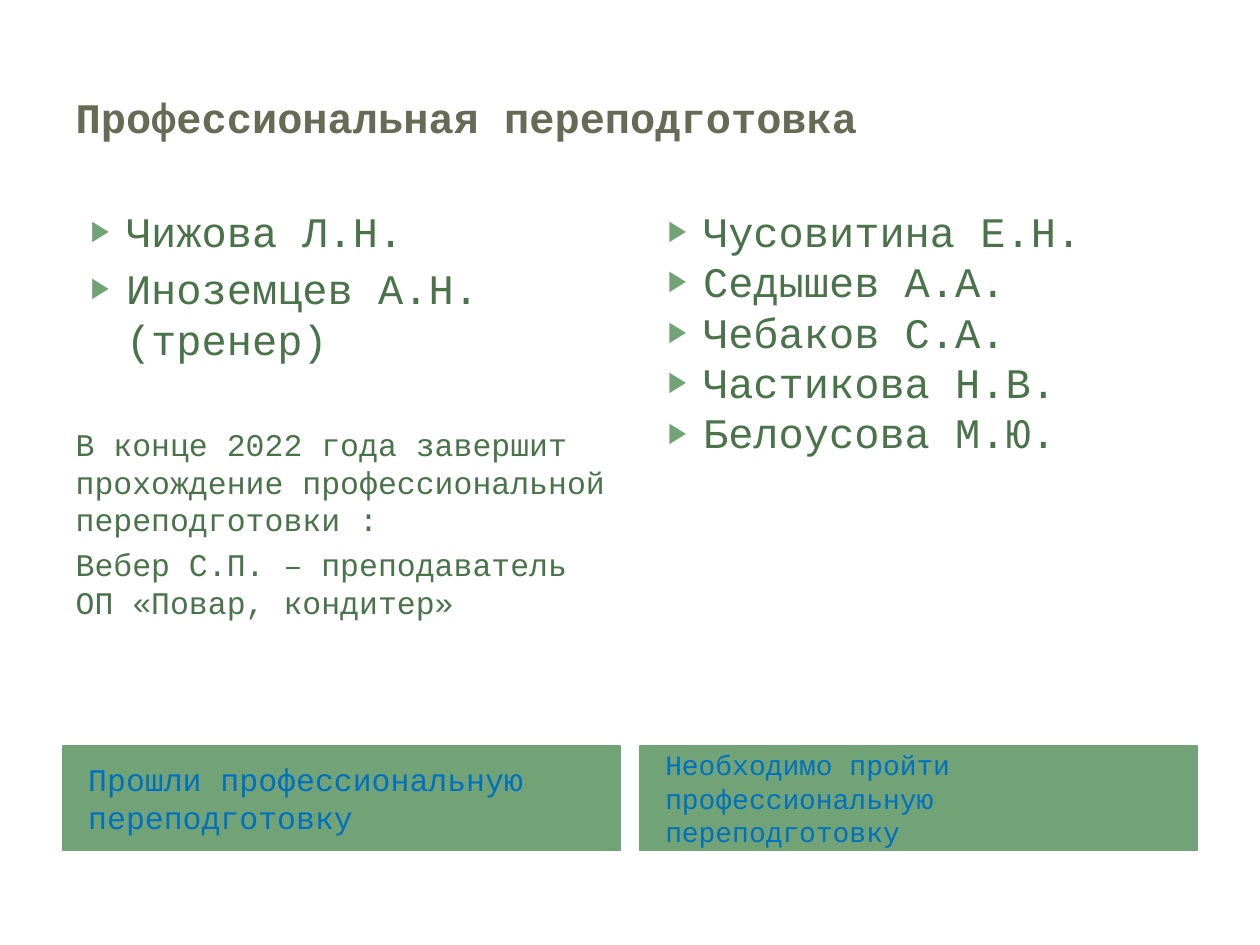
from dataclasses import dataclass

from lxml import etree
from pptx import Presentation
from pptx import util as u
from pptx.dml.color import RGBColor
from pptx.enum import text as t
from pptx.oxml.ns import qn


@dataclass(frozen=True)
class Theme:
    font: str = "Courier New"
    title: str = "676A55"
    body: str = "4B734B"
    accent: str = "72A376"
    label: str = "0070C0"
    large: int = 24
    medium: int = 18
    small: int = 16


THEME = Theme()
COLUMN_LEFTS = (0.5, 5.08)
COLUMN_WIDTH = 4.42
COMPLETED = ("Чижова Л.Н.", "Иноземцев А.Н. (тренер)")
UPCOMING = (
    "В конце 2022 года завершит прохождение профессиональной переподготовки :",
    "Вебер С.П. – преподаватель ОП «Повар, кондитер»",
)
REQUIRED = (
    "Чусовитина Е.Н.",
    "Седышев А.А.",
    "Чебаков С.А.",
    "Частикова Н.В.",
    "Белоусова М.Ю.",
)


def place(shape, left, top, width, height, anchor=t.MSO_ANCHOR.TOP):
    shape.left, shape.top = u.Inches(left), u.Inches(top)
    shape.width, shape.height = u.Inches(width), u.Inches(height)
    frame = shape.text_frame
    frame.word_wrap = True
    frame.auto_size = t.MSO_AUTO_SIZE.NONE
    frame.vertical_anchor = anchor
    return frame


def set_bullet(paragraph, bulleted):
    properties = paragraph._p.get_or_add_pPr()
    properties.set("marL", str(u.Inches(0.4) if bulleted else 0))
    properties.set("indent", str(u.Inches(-0.28) if bulleted else 0))
    if not bulleted:
        etree.SubElement(properties, qn("a:buNone"))
        return
    color = etree.SubElement(properties, qn("a:buClr"))
    etree.SubElement(color, qn("a:srgbClr"), val=THEME.accent)
    etree.SubElement(properties, qn("a:buSzPct"), val="68000")
    etree.SubElement(properties, qn("a:buChar"), char="▶")


def add_text(frame, text, size, color, bold=False, bulleted=False, before=0):
    paragraph = frame.paragraphs[0]
    if paragraph.runs:
        paragraph = frame.add_paragraph()
    set_bullet(paragraph, bulleted)
    paragraph.alignment = t.PP_ALIGN.LEFT
    paragraph.space_before = u.Pt(before)
    run = paragraph.add_run()
    run.text = text
    run.font.name = THEME.font
    run.font.size = u.Pt(size)
    run.font.bold = bold
    run.font.color.rgb = RGBColor.from_string(color)


def fill_label(shape, left, text, size):
    frame = place(shape, left, 5.92, COLUMN_WIDTH, 0.83, t.MSO_ANCHOR.MIDDLE)
    frame.margin_left = u.Inches(0.2)
    accent = RGBColor.from_string(THEME.accent)
    shape.fill.solid()
    shape.fill.fore_color.rgb = accent
    shape.line.color.rgb = accent
    shape.line.width = u.Pt(0.75)
    add_text(frame, text, size, THEME.label)


def fill_list(shape, left, names, gap=0):
    frame = place(shape, left, 1.58, COLUMN_WIDTH, 4.31)
    for index, name in enumerate(names):
        add_text(frame, name, THEME.large, THEME.body, bulleted=True,
                 before=gap if index else 0)
    return frame


def main():
    presentation = Presentation()
    presentation.slide_width = u.Inches(10)
    presentation.slide_height = u.Inches(7.5)
    slide = presentation.slides.add_slide(
        presentation.slide_layouts.get_by_name("Comparison"))
    title, left_label, left_list, right_label, right_list = slide.placeholders

    frame = place(title, 0.5, 0.3, 9, 1.25, t.MSO_ANCHOR.MIDDLE)
    add_text(frame, "Профессиональная переподготовка", THEME.large, THEME.title,
             bold=True)

    left, right = COLUMN_LEFTS
    fill_label(left_label, left, "Прошли профессиональную переподготовку",
               THEME.medium)
    fill_label(right_label, right,
               "Необходимо пройти профессиональную переподготовку", THEME.small)

    frame = fill_list(left_list, left, COMPLETED, gap=4)
    for text, before in zip(UPCOMING, (35, 4)):
        add_text(frame, text, THEME.medium, THEME.body, before=before)
    fill_list(right_list, right, REQUIRED)

    presentation.save("out.pptx")


if __name__ == "__main__":
    main()
